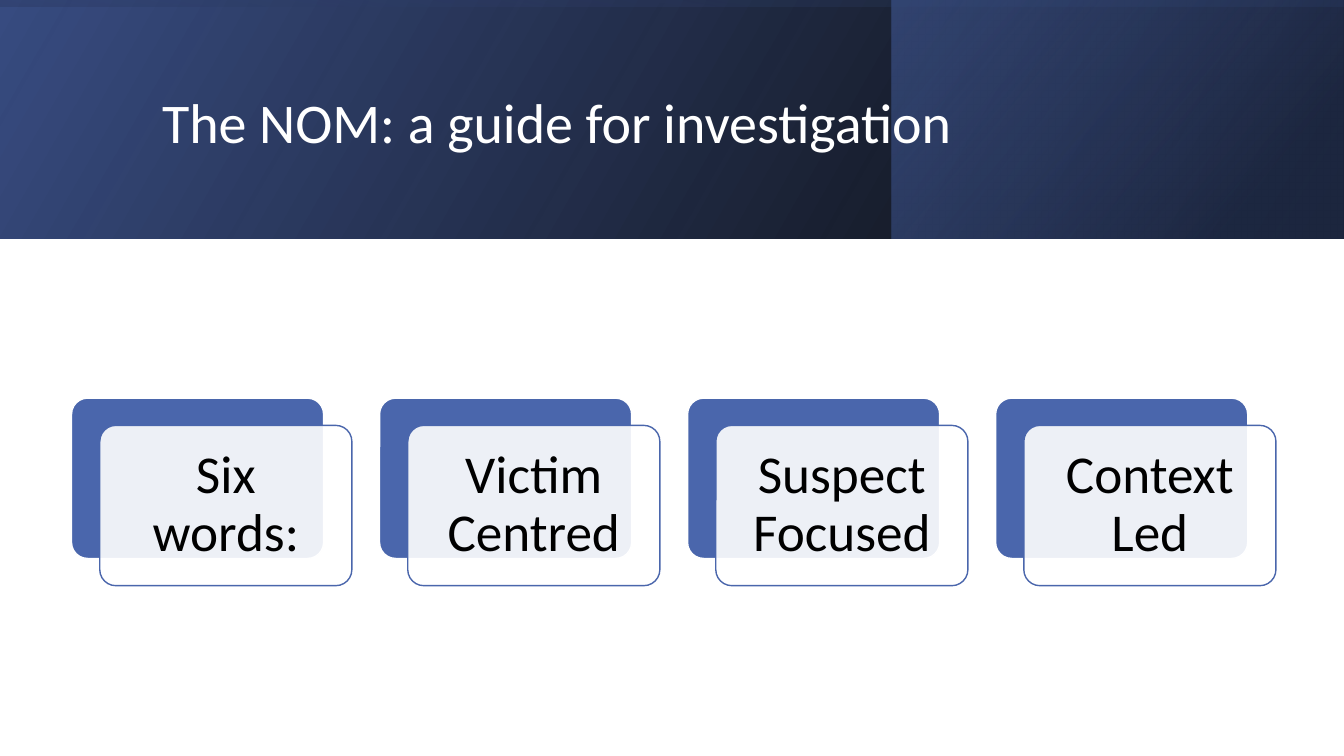
import pptx
import pptx.dml.color
import pptx.enum.shapes
import pptx.enum.text
import pptx.oxml.ns
import pptx.util
from lxml import etree
from pptx.util import Inches

RGBColor = pptx.dml.color.RGBColor
SHAPES = pptx.enum.shapes.MSO_SHAPE
WHITE = RGBColor(0xFF, 0xFF, 0xFF)
BLACK = RGBColor(0x00, 0x00, 0x00)
BLUE = RGBColor(0x4A, 0x66, 0xAC)
MID_BLUE = RGBColor(0x38, 0x4C, 0x81)
DARK_BLUE = RGBColor(0x25, 0x33, 0x56)
FONT = "Calibri"


def add_plain_shape(kind, left, top, width, height):
    shape = slide.shapes.add_shape(
        kind, Inches(left), Inches(top), Inches(width), Inches(height))
    shape.shadow.inherit = False
    return shape


def set_opacity(color_element, percent):
    alpha = etree.SubElement(color_element, pptx.oxml.ns.qn("a:alpha"))
    alpha.set("val", str(percent * 1000))


deck = pptx.Presentation()
deck.slide_width = Inches(13.33)
deck.slide_height = Inches(7.5)
slide = deck.slides.add_slide(deck.slide_layouts[6])

# Header band: three mirrored gradients, stops as (position, colour, opacity)
header_layers = [
    ((0, 0, 13.33, 2.37), 0, 30, [(0, BLACK, 96), (1, MID_BLUE, 100)]),
    ((8.84, 0, 4.48, 2.37), 0, 40, [(0.19, DARK_BLUE, 68), (1, BLUE, 48)]),
    ((5.48, -5.48, 2.37, 13.33), 270, 10, [(0.23, MID_BLUE, 16), (0.99, BLACK, 45)]),
]
for box, rotation, angle, stops in header_layers:
    layer = add_plain_shape(SHAPES.RECTANGLE, *box)
    layer.rotation = rotation
    layer._element.spPr.xfrm.set("flipH", "1")
    layer.line.fill.background()
    layer.fill.gradient()
    layer.fill.gradient_angle = angle
    for stop, (position, color, opacity) in zip(layer.fill.gradient_stops, stops):
        stop.position = position
        stop.color.rgb = color
        set_opacity(stop._gs[0], opacity)

# Title
title = slide.shapes.add_textbox(Inches(1.51), Inches(0.38), Inches(10.63), Inches(1.72))
title.text_frame.word_wrap = True
title.text_frame.vertical_anchor = pptx.enum.text.MSO_ANCHOR.MIDDLE
heading = title.text_frame.paragraphs[0]
heading.text = "The NOM: a guide for investigation"
heading.line_spacing = 0.9
heading.font.name = FONT
heading.font.size = pptx.util.Pt(40)
heading.font.color.rgb = WHITE

# Four cards, each a translucent panel offset over a blue one
CARD_PITCH = 3.055
for index, words in enumerate(
        ["Six words:", "Victim Centred", "Suspect Focused", "Context Led"]):
    left = 0.71 + index * CARD_PITCH
    backing = add_plain_shape(SHAPES.ROUNDED_RECTANGLE, left, 3.95, 2.5, 1.59)
    panel = add_plain_shape(SHAPES.ROUNDED_RECTANGLE, left + 0.28, 4.22, 2.5, 1.59)
    for card, fill, outline in [(backing, BLUE, WHITE), (panel, WHITE, BLUE)]:
        card.adjustments[0] = 0.1
        card.fill.solid()
        card.fill.fore_color.rgb = fill
        card.line.color.rgb = outline
        card.line.width = pptx.util.Pt(1)
    set_opacity(panel._element.spPr.find(pptx.oxml.ns.qn("a:solidFill"))[0], 90)

    frame = panel.text_frame
    frame.word_wrap = True
    frame.vertical_anchor = pptx.enum.text.MSO_ANCHOR.MIDDLE
    frame.margin_left = frame.margin_right = Inches(0.19)
    frame.margin_top = frame.margin_bottom = Inches(0.19)
    label = frame.paragraphs[0]
    label.text = words
    label.alignment = pptx.enum.text.PP_ALIGN.CENTER
    label.line_spacing = 0.9
    label.font.name = FONT
    label.font.size = pptx.util.Pt(38)
    label.font.color.rgb = BLACK

deck.save("out.pptx")
